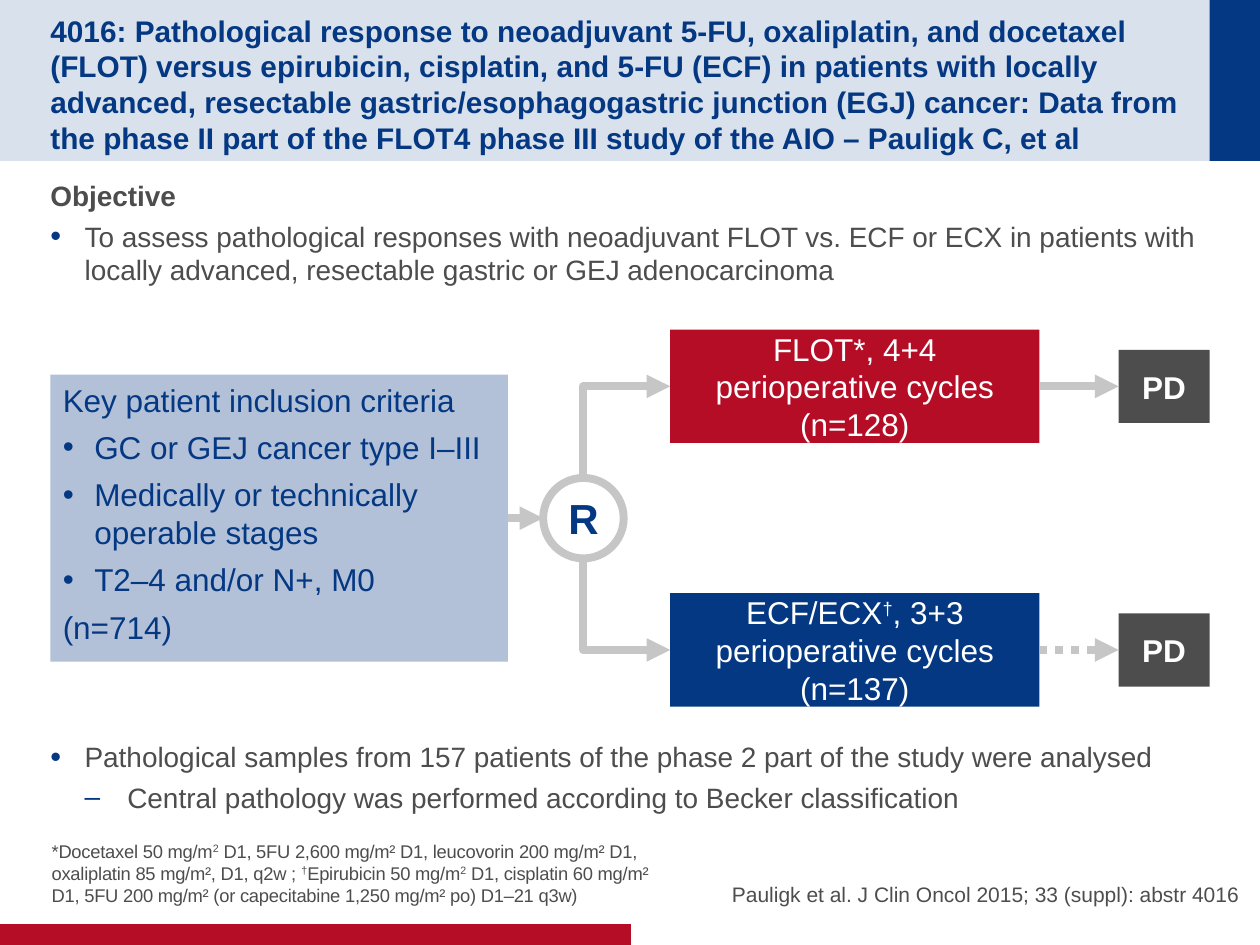
from lxml import etree
from pptx import Presentation
from pptx.dml.color import RGBColor
from pptx.enum.dml import MSO_LINE
from pptx.enum.shapes import MSO_CONNECTOR, MSO_SHAPE
from pptx.enum.text import MSO_ANCHOR, PP_ALIGN
from pptx.oxml.ns import qn
from pptx.util import Pt

NAVY = RGBColor(0x04, 0x38, 0x82)
RED = RGBColor(0xB6, 0x0D, 0x27)
GREY = RGBColor(0x4D, 0x4D, 0x4D)
SILVER = RGBColor(0xC6, 0xC6, 0xC6)
PALE_BLUE = RGBColor(0xB2, 0xC0, 0xD8)
WHITE = RGBColor(0xFF, 0xFF, 0xFF)
RECTANGLE, OVAL = MSO_SHAPE.RECTANGLE, MSO_SHAPE.OVAL
STRAIGHT, ELBOW = MSO_CONNECTOR.STRAIGHT, MSO_CONNECTOR.ELBOW
TOP, MIDDLE, BOTTOM = MSO_ANCHOR.TOP, MSO_ANCHOR.MIDDLE, MSO_ANCHOR.BOTTOM
LEFT, CENTER, RIGHT = PP_ALIGN.LEFT, PP_ALIGN.CENTER, PP_ALIGN.RIGHT
DOTTED = MSO_LINE.ROUND_DOT
LEFT_SITE, RIGHT_SITE = 1, 3

MARGIN = 28.8
RIGHT_EDGE = 691.2
CENTRE_Y = 296.1
ARM_RISE = 75.3
CIRCLE_X, CIRCLE_SIZE = 333.4, 46
ARM_LEFT, ARM_WIDTH, ARM_HEIGHT = 383, 211, 64.8
PD_WIDTH, PD_HEIGHT = 52, 41.8


def add_child(parent, tag, **attributes):
    """Append a DrawingML element to a parent."""
    return etree.SubElement(parent, qn(tag), attributes)


def add_box(slide, left, top, width, height, fill=None, kind=RECTANGLE):
    """Add a flat shape with no outline."""
    box = slide.shapes.add_shape(kind, Pt(left), Pt(top), Pt(width), Pt(height))
    box.shadow.inherit = False
    box.line.fill.background()
    if fill is None:
        box.fill.background()
    else:
        box.fill.solid()
        box.fill.fore_color.rgb = fill
    return box


def set_frame(shape, anchor=TOP, insets=(0, 0, 0, 0), wrap=True):
    """Set the layout of a text frame and return the frame."""
    frame = shape.text_frame
    frame.word_wrap = wrap
    frame.vertical_anchor = anchor
    (frame.margin_left, frame.margin_top,
     frame.margin_right, frame.margin_bottom) = map(Pt, insets)
    return frame


def add_text_area(slide, left, top, width, height, anchor=TOP, insets=(0, 0, 0, 0)):
    """Add a wrapping text box and return its frame."""
    area = slide.shapes.add_textbox(Pt(left), Pt(top), Pt(width), Pt(height))
    return set_frame(area, anchor, insets)


def set_bullet(paragraph, char, margin, hang, color, percent):
    """Give a paragraph a hanging bullet."""
    properties = paragraph._p.get_or_add_pPr()
    properties.set("marL", str(Pt(margin)))
    properties.set("indent", str(-Pt(hang)))
    add_child(add_child(properties, "a:buClr"), "a:srgbClr", val=str(color))
    add_child(properties, "a:buSzPct", val=str(percent * 1000))
    add_child(properties, "a:buFont", typeface="Arial")
    add_child(properties, "a:buChar", char=char)


def add_paragraph(frame, text, size, color, bold=False, align=LEFT, after=0,
                  bullet=None, tracking=0):
    """Write a paragraph in which ^ switches superscript on and off."""
    first = frame.paragraphs[0]
    paragraph = frame.add_paragraph() if first.runs else first
    if bullet:
        set_bullet(paragraph, *bullet)
    paragraph.alignment = align
    paragraph.space_after = Pt(after)
    for index, part in enumerate(text.split("^")):
        run = paragraph.add_run()
        run.text = part
        run.font.name = "Arial"
        run.font.size = Pt(size)
        run.font.bold = bold
        run.font.color.rgb = color
        properties = run._r.get_or_add_rPr()
        if index % 2:
            properties.set("baseline", "30000")
        if tracking:
            properties.set("spc", str(int(tracking * 100)))


def add_arrow(slide, start, end, kind=STRAIGHT, dash=None):
    """Add a thick silver arrow."""
    arrow = slide.shapes.add_connector(kind, *map(Pt, start + end))
    arrow.line.color.rgb = SILVER
    arrow.line.width = Pt(4.5)
    if dash:
        arrow.line.dash_style = dash
    add_child(arrow.line._get_or_add_ln(), "a:tailEnd", type="triangle")
    add_child(arrow._element.spPr, "a:effectLst")
    return arrow


def add_branch(slide, direction):
    """Add a one-corner arrow from the circle up (-1) or down (1) to an arm."""
    reach = ARM_LEFT - CIRCLE_X
    rise = ARM_RISE - CIRCLE_SIZE / 2
    middle_x = CIRCLE_X + reach / 2
    middle_y = CENTRE_Y + direction * (CIRCLE_SIZE / 2 + rise / 2)
    start = (middle_x + rise / 2, middle_y - direction * reach / 2)
    end = (middle_x - rise / 2, middle_y + direction * reach / 2)
    properties = add_arrow(slide, start, end, ELBOW)._element.spPr
    properties.find(qn("a:prstGeom")).set("prst", "bentConnector2")
    quarter_turns = 1 if direction < 0 else 3
    properties.find(qn("a:xfrm")).set("rot", str(quarter_turns * 5400000))


def add_arm(slide, direction, regimen, count, fill, dash=None):
    """Add a treatment arm with its branch, arrow and PD box."""
    y = CENTRE_Y + direction * ARM_RISE
    pd_left = RIGHT_EDGE - PD_WIDTH
    add_branch(slide, direction)
    arm = add_box(slide, ARM_LEFT, y - ARM_HEIGHT / 2, ARM_WIDTH, ARM_HEIGHT, fill)
    frame = set_frame(arm, MIDDLE, (7.2, 0, 7.2, 0))
    for text in (regimen, count):
        add_paragraph(frame, text, 18, WHITE, align=CENTER)
    progression = add_box(slide, pd_left, y - PD_HEIGHT / 2, PD_WIDTH, PD_HEIGHT, GREY)
    frame = set_frame(progression, MIDDLE, (7.2, 0, 7.2, 0))
    add_paragraph(frame, "PD", 18, WHITE, bold=True, align=CENTER)
    arrow = add_arrow(slide, (ARM_LEFT + ARM_WIDTH, y), (pd_left, y), dash=dash)
    arrow.begin_connect(arm, RIGHT_SITE)
    arrow.end_connect(progression, LEFT_SITE)


def add_header(slide):
    """Add the header bands, the footer bar and the title."""
    band = add_box(slide, 0, 0, 720, 92, NAVY)
    band_color = band._element.spPr.find(qn("a:solidFill"))[0]
    add_child(band_color, "a:alpha", val="15000")
    add_box(slide, RIGHT_EDGE, 0, 28.8, 92, NAVY)
    add_box(slide, 0, 528, 360.6, 12, RED)
    title = add_text_area(slide, MARGIN, 14.4, 648.7, 63.4, MIDDLE, (0, 3.6, 0, 0))
    add_paragraph(title, "4016: Pathological response to neoadjuvant 5-FU, oxaliplatin, and "
                  "docetaxel (FLOT) versus epirubicin, cisplatin, and 5-FU (ECF) in patients "
                  "with locally advanced, resectable gastric/esophagogastric junction (EGJ) "
                  "cancer: Data from the phase II part of the FLOT4 phase III study of the "
                  "AIO – Pauligk C, et al", 17, NAVY, bold=True)


def add_body(slide):
    """Add the objective above the diagram and the samples below it."""
    dot = ("•", 19.6, 19.6, NAVY, 110)
    dash = ("–", 44, 24.4, NAVY, 100)
    width = RIGHT_EDGE - MARGIN
    objective = add_text_area(slide, MARGIN, 98.6, width, 72, insets=(0, 3.6, 0, 3.6))
    add_paragraph(objective, "Objective", 16, GREY, bold=True, after=4)
    add_paragraph(objective, "To assess pathological responses with neoadjuvant FLOT vs. ECF or "
                  "ECX in patients with locally advanced, resectable gastric or GEJ "
                  "adenocarcinoma", 16, GREY, after=4, bullet=dot)
    samples = add_text_area(slide, MARGIN, 419.2, width, 53, insets=(0, 3.6, 0, 3.6))
    add_paragraph(samples, "Pathological samples from 157 patients of the phase 2 part of the "
                  "study were analysed", 16, GREY, after=4, bullet=dot)
    add_paragraph(samples, "Central pathology was performed according to Becker classification",
                  16, GREY, after=4, bullet=dash)


def add_diagram(slide):
    """Add the criteria, the randomisation circle and both arms."""
    criteria = add_box(slide, MARGIN, CENTRE_Y - 82, 261.4, 164, PALE_BLUE)
    frame = set_frame(criteria, TOP, (7.2, 3.6, 7.2, 3.6))
    dot = ("•", 18, 18, NAVY, 100)
    for text, bullet in (("Key patient inclusion criteria", None),
                         ("GC or GEJ cancer type I–III", dot),
                         ("Medically or technically operable stages", dot),
                         ("T2–4 and/or N+, M0", dot),
                         ("(n=714)", None)):
        add_paragraph(frame, text, 18, NAVY, after=5.4, bullet=bullet)
    radius = CIRCLE_SIZE / 2
    circle = add_box(slide, CIRCLE_X - radius, CENTRE_Y - radius,
                     CIRCLE_SIZE, CIRCLE_SIZE, kind=OVAL)
    circle.line.color.rgb = SILVER
    circle.line.width = Pt(4.5)
    frame = set_frame(circle, MIDDLE, wrap=False)
    add_paragraph(frame, "R", 24, NAVY, bold=True, align=CENTER)
    entry = add_arrow(slide, (MARGIN + 261.4, CENTRE_Y), (CIRCLE_X - radius, CENTRE_Y))
    entry.begin_connect(criteria, RIGHT_SITE)
    add_arm(slide, -1, "FLOT*, 4+4 perioperative cycles", "(n=128)", RED)
    add_arm(slide, 1, "ECF/ECX^†^, 3+3 perioperative cycles", "(n=137)", NAVY, DOTTED)


def add_footer(slide):
    """Add the dosing footnote and the citation."""
    dosing = add_text_area(slide, 29.5, 479.5, 358.6, 38.2, BOTTOM)
    add_paragraph(dosing, "*Docetaxel 50 mg/m^2^ D1, 5FU 2,600 mg/m² D1, leucovorin 200 mg/m² D1, "
                  "oxaliplatin 85 mg/m², D1, q2w ; ^†^Epirubicin 50 mg/m^2^ D1, cisplatin "
                  "60 mg/m² D1, 5FU 200 mg/m² (or capecitabine 1,250 mg/m² po) D1–21 q3w)",
                  10.5, GREY, after=4, tracking=-0.1)
    citation = add_text_area(slide, 383, 480.2, 325.4, 38.2, BOTTOM)
    add_paragraph(citation, "Pauligk et al. J Clin Oncol 2015; 33 (suppl): abstr 4016",
                  12, GREY, align=RIGHT, after=4)


def main():
    """Build and save the slide."""
    deck = Presentation()
    deck.slide_width, deck.slide_height = Pt(720), Pt(540)
    slide = deck.slides.add_slide(deck.slide_layouts[6])
    add_header(slide)
    add_body(slide)
    add_diagram(slide)
    add_footer(slide)
    deck.save("out.pptx")


if __name__ == "__main__":
    main()
